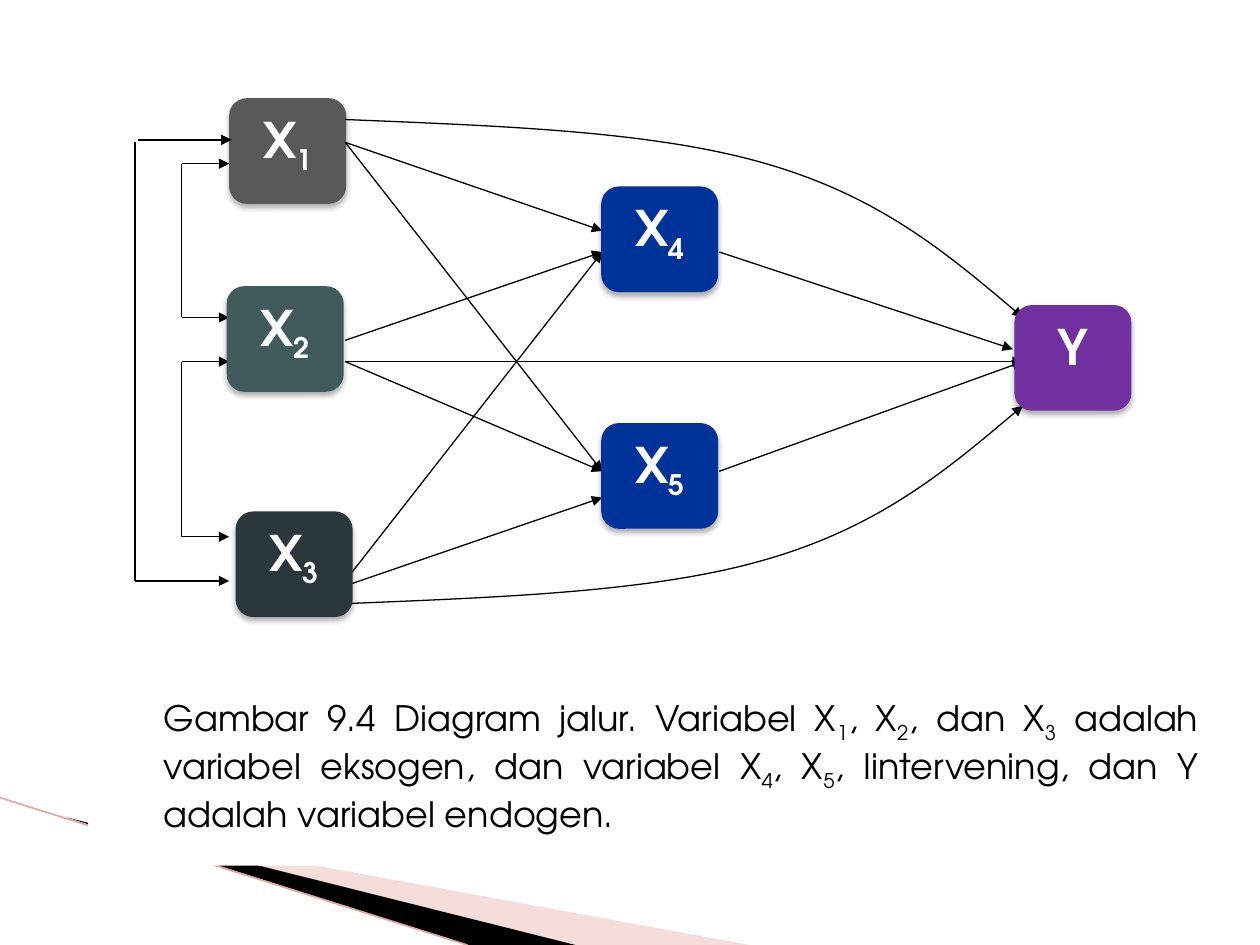
import pptx
import pptx.dml.color
import pptx.enum.shapes
import pptx.enum.text
import pptx.oxml
import pptx.oxml.ns
import pptx.util
from lxml import etree

Cm, Pt = pptx.util.Cm, pptx.util.Pt
qn = pptx.oxml.ns.qn
FONT = "TeX Gyre Adventor"
NODE_W, NODE_H = 2.36, 2.13

# Caption and node labels: a digit after "_" is a subscript
CAPTION = ("Gambar 9.4 Diagram jalur. Variabel X_1, X_2, dan X_3 adalah variabel "
           "eksogen, dan variabel X_4, X_5, Iintervening, dan Y adalah variabel endogen. ")

# Label, left, top, fill
EXOGENOUS_FIRST = ("X_1", 4.62, 1.98, "595959")
OTHER_NODES = [
    ("X_2", 4.57, 5.77, "415B5C"),
    ("X_3", 4.75, 10.31, "2A373D"),
    ("X_4", 12.12, 3.76, "003399"),
    ("X_5", 12.12, 8.53, "003399"),
    ("Y", 20.45, 6.15, "7030A0"),
]

# Straight paths between variables
PATHS = [
    (6.96, 7.29, 20.62, 7.29),
    (6.96, 2.87, 12.14, 4.65),
    (14.5, 5.08, 20.42, 7.04),
    (6.96, 11.81, 12.14, 10.03),
    (14.5, 9.5, 20.62, 7.29),
    (6.96, 2.87, 12.14, 9.5),
    (6.96, 7.29, 12.14, 9.5),
    (6.96, 11.71, 12.14, 5.08),
    (6.96, 6.86, 12.14, 5.08),
]

# Curved path from X1 to Y; the one from X3 is its mirror image
CURVE = [(6.96, 2.41), (10.08, 2.54), (13.18, 2.64), (15.44, 3.3),
         (17.73, 3.96), (19.18, 5.18), (20.62, 6.4)]
MIRROR_SUM = 14.58

# Correlation brackets: arrows, then spines
BRACKET_ARROWS = [(3.66, y, 4.62, y) for y in (3.3, 6.4, 7.29, 10.82)]
BRACKET_ARROWS += [(2.79, 2.82, 4.67, 2.82), (2.72, 11.71, 4.62, 11.71)]
BRACKET_SPINES = [(3.66, 3.3, 3.66, 6.4), (3.66, 7.29, 3.66, 10.82),
                  (2.72, 2.87, 2.72, 11.71)]


def rgb(value):
    return pptx.dml.color.RGBColor.from_string(value)


def add_fill(shape, color):
    shape.fill.solid()
    shape.fill.fore_color.rgb = rgb(color)
    shape.line.fill.background()
    shape.shadow.inherit = False


def style_line(line, color, width, arrow):
    line.color.rgb = rgb(color)
    line.width = Pt(width)
    if arrow:
        etree.SubElement(line._get_or_add_ln(), qn("a:tailEnd"), type="triangle")


def add_line(s, ends, color="000000", width=0.75, arrow=False):
    c = s.shapes.add_connector(pptx.enum.shapes.MSO_CONNECTOR.STRAIGHT,
                               *[Cm(v) for v in ends])
    style_line(c.line, color, width, arrow)
    etree.SubElement(c._element.spPr, qn("a:effectLst"))


def add_freeform(s, points, close):
    pts = [(Cm(x), Cm(y)) for x, y in points]
    builder = s.shapes.build_freeform(*pts[0], scale=1.0)
    builder.add_line_segments(pts[1:], close=close)
    return builder.convert_to_shape()


def add_curve(s, points):
    sp = add_freeform(s, points, close=False)
    sp.fill.background()
    sp.shadow.inherit = False
    style_line(sp.line, "000000", 0.75, True)
    # Every three line segments become one Bezier segment
    segments = list(sp._element.iter(qn("a:lnTo")))
    for first in range(0, len(segments), 3):
        group = segments[first:first + 3]
        bezier = etree.Element(qn("a:cubicBezTo"))
        group[0].addprevious(bezier)
        for segment in group:
            bezier.append(segment[0])
            segment.getparent().remove(segment)


def add_text(p, text, size, color, bold=False):
    p.font.name = FONT
    p.font.size = Pt(size)
    p.font.bold = bold
    p.font.color.rgb = rgb(color)
    for i, part in enumerate(text.split("_")):
        if i:
            sub = p.add_run()
            sub.text = part[0]
            sub.font._element.set("baseline", "-25000")
            part = part[1:]
        if part:
            r = p.add_run()
            r.text = part


def add_node(s, label, left, top, color):
    sp = s.shapes.add_shape(pptx.enum.shapes.MSO_SHAPE.ROUNDED_RECTANGLE,
                            Cm(left), Cm(top), Cm(NODE_W), Cm(NODE_H))
    add_fill(sp, color)
    effects = sp._element.spPr.find(qn("a:effectLst"))
    shadow = etree.SubElement(effects, qn("a:outerShdw"), blurRad=str(Pt(3.5)),
                              dist=str(Pt(2.2)), dir="5400000", rotWithShape="0")
    black = etree.SubElement(shadow, qn("a:srgbClr"), val="000000")
    etree.SubElement(black, qn("a:alpha"), val="32000")
    tf = sp.text_frame
    tf.vertical_anchor = pptx.enum.text.MSO_ANCHOR.TOP
    p = tf.paragraphs[0]
    p.alignment = pptx.enum.text.PP_ALIGN.CENTER
    p.space_after = Pt(5)
    add_text(p, label, 28, "FFFFFF", bold=True)


def add_caption(s):
    sp = s.shapes.add_shape(pptx.enum.shapes.MSO_SHAPE.RECTANGLE,
                            Cm(1.78), Cm(13.92), Cm(22.63), Cm(3.53))
    add_fill(sp, "FFFFFF")
    tf = sp.text_frame
    tf.word_wrap = True
    tf.vertical_anchor = pptx.enum.text.MSO_ANCHOR.TOP
    p = tf.paragraphs[0]
    p.alignment = pptx.enum.text.PP_ALIGN.JUSTIFY
    p.level = 1
    p.space_after = Pt(10)
    p_pr = p._p.get_or_add_pPr()
    p_pr.set("marL", str(Cm(1.27)))
    p_pr.set("indent", "0")
    add_text(p, CAPTION, 20, "000000")


def add_corner_decoration(s):
    pink = add_freeform(s, [(1.4, 16.54), (15.11, 19.05), (11.58, 19.05)], close=True)
    add_fill(pink, "E7ACA4")
    color = pink._element.spPr.find(qn("a:solidFill"))[0]
    etree.SubElement(color, qn("a:alpha"), val="40000")
    black = add_freeform(s, [(1.35, 16.48), (11.6, 19.05), (9.45, 19.05)], close=True)
    add_fill(black, "000000")
    add_line(s, (0, 16.08, 9.42, 19.05), "E3A59C", 0.95)


def main():
    prs = pptx.Presentation()
    prs.slide_width, prs.slide_height = Cm(25.4), Cm(19.05)
    s = prs.slides.add_slide(prs.slide_layouts[6])

    # Background and caption
    add_corner_decoration(s)
    add_node(s, *EXOGENOUS_FIRST)
    add_caption(s)

    # Paths and correlations
    for ends in PATHS:
        add_line(s, ends, arrow=True)
    add_curve(s, [(x, MIRROR_SUM - y) for x, y in CURVE])
    add_curve(s, CURVE)
    for ends in BRACKET_ARROWS:
        add_line(s, ends, arrow=True)
    for ends in BRACKET_SPINES:
        add_line(s, ends)

    # Remaining variables lie over the path ends
    for node in OTHER_NODES:
        add_node(s, *node)

    prs.save("out.pptx")


if __name__ == "__main__":
    main()
